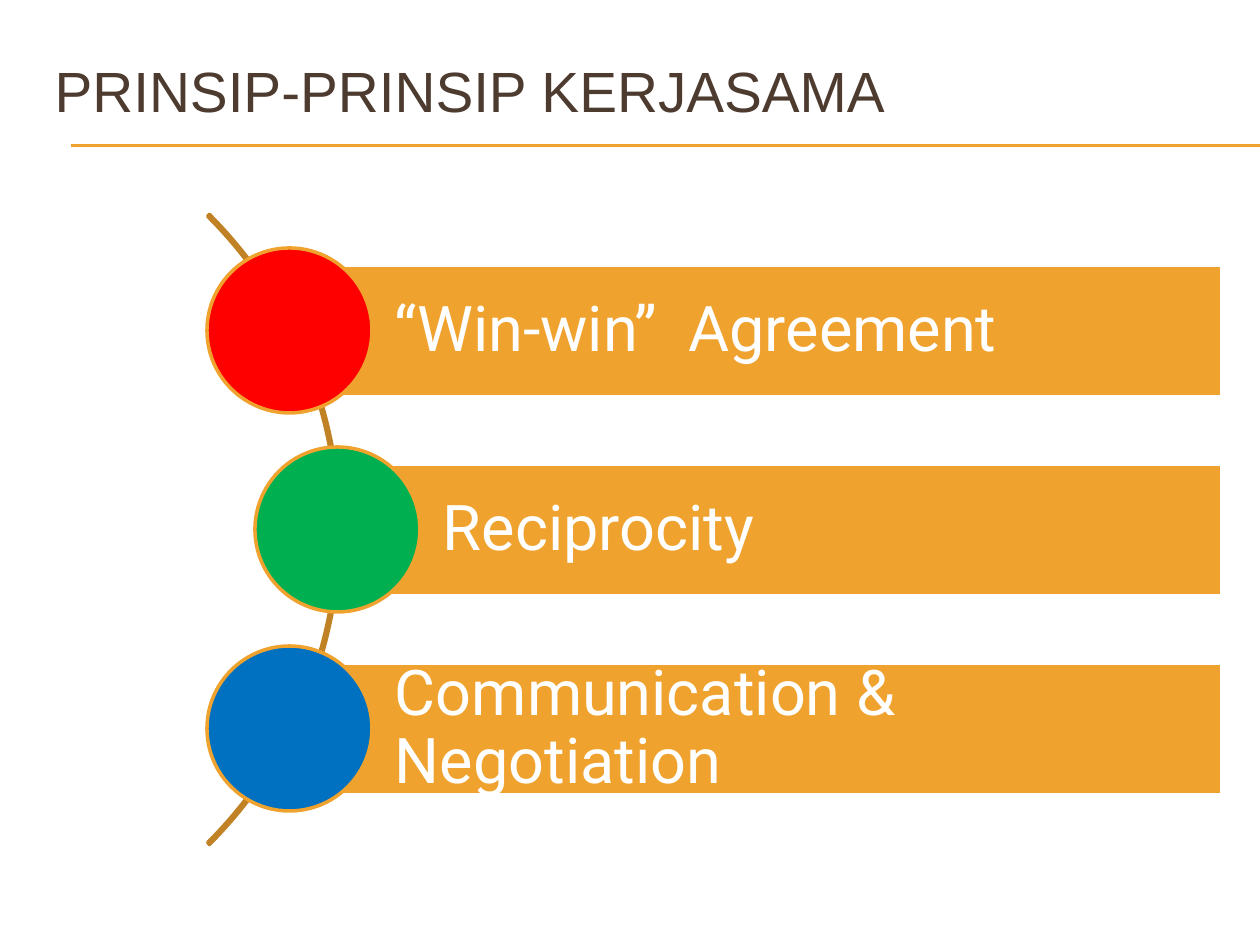
"""Build the slide on principles of cooperation, with three bars along an arc."""
from pptx import Presentation
from pptx.dml.color import RGBColor
from pptx.enum.shapes import MSO_CONNECTOR as Wire, MSO_SHAPE as Shape
from pptx.enum.text import MSO_ANCHOR as Anchor, PP_ALIGN as Align
from pptx.oxml.ns import qn
from pptx.util import Pt
from lxml.etree import SubElement

SCALE = 914400 / 126
GOLD, WHITE = "F0A22E", "FFFFFF"


def px(*nums):
    return [round(n * SCALE) for n in nums]


def paint(color, tone):
    color.rgb = RGBColor.from_string(tone)


deck = Presentation()
deck.slide_width, deck.slide_height = px(1260, 945)
slide = deck.slides.add_slide(deck.slide_layouts[5])
shapes = slide.shapes

for y in (145, 146):
    rule = shapes.add_connector(Wire.STRAIGHT, *px(71, y, 1260, y))
    paint(rule.line.color, GOLD)
    rule.line.width = Pt(0.75)
    SubElement(rule.element.spPr, qn("a:effectLst"))

title = shapes.title
title.left, title.top, title.width, title.height = px(42, 63, 1197, 116)
frame = title.text_frame
frame.text = "PRINSIP-PRINSIP KERJASAMA"
frame.vertical_anchor = Anchor.MIDDLE
frame.margin_top, frame.margin_bottom = px(0, 63)
para = frame.paragraphs[0]
para.alignment = Align.LEFT
font = para.runs[0].font
font.name, font.size = "Arial", Pt(32.4)
paint(font.color, "4E3B30")

arc = shapes.add_shape(Shape.BLOCK_ARC, *px(-551, 84, 891, 891))
for i, value in enumerate((189, 27, 0.003)):
    arc.adjustments[i] = value
arc.shadow.inherit = False
arc.fill.background()
paint(arc.line.color, "C08225")
arc.line.width = Pt(2)

items = [
    ("“Win-win”  Agreement", 290, "FF0000"),
    ("Reciprocity", 338, "00B050"),
    ("Communication & Negotiation", 290, "0070C0"),
]
for i, (words, x, tone) in enumerate(items):
    mid = 331 + 199 * i
    bar = shapes.add_shape(Shape.RECTANGLE, *px(x, mid - 66, 1222 - x, 132))
    dot = shapes.add_shape(Shape.OVAL, *px(x - 83, mid - 83, 165, 165))
    for item, fill, edge in ((bar, GOLD, WHITE), (dot, tone, GOLD)):
        item.shadow.inherit = False
        item.fill.solid()
        paint(item.fill.fore_color, fill)
        paint(item.line.color, edge)
        item.line.width = Pt(2)

    frame = bar.text_frame
    frame.text = words
    frame.word_wrap = True
    frame.vertical_anchor = Anchor.MIDDLE
    frame.margin_left, frame.margin_right = px(105, 13)
    frame.margin_top, frame.margin_bottom = px(13, 13)
    para = frame.paragraphs[0]
    para.alignment = Align.LEFT
    para.line_spacing = 0.9
    font = para.runs[0].font
    font.name, font.size = "Roboto", Pt(36)
    paint(font.color, WHITE)

deck.save("out.pptx")
